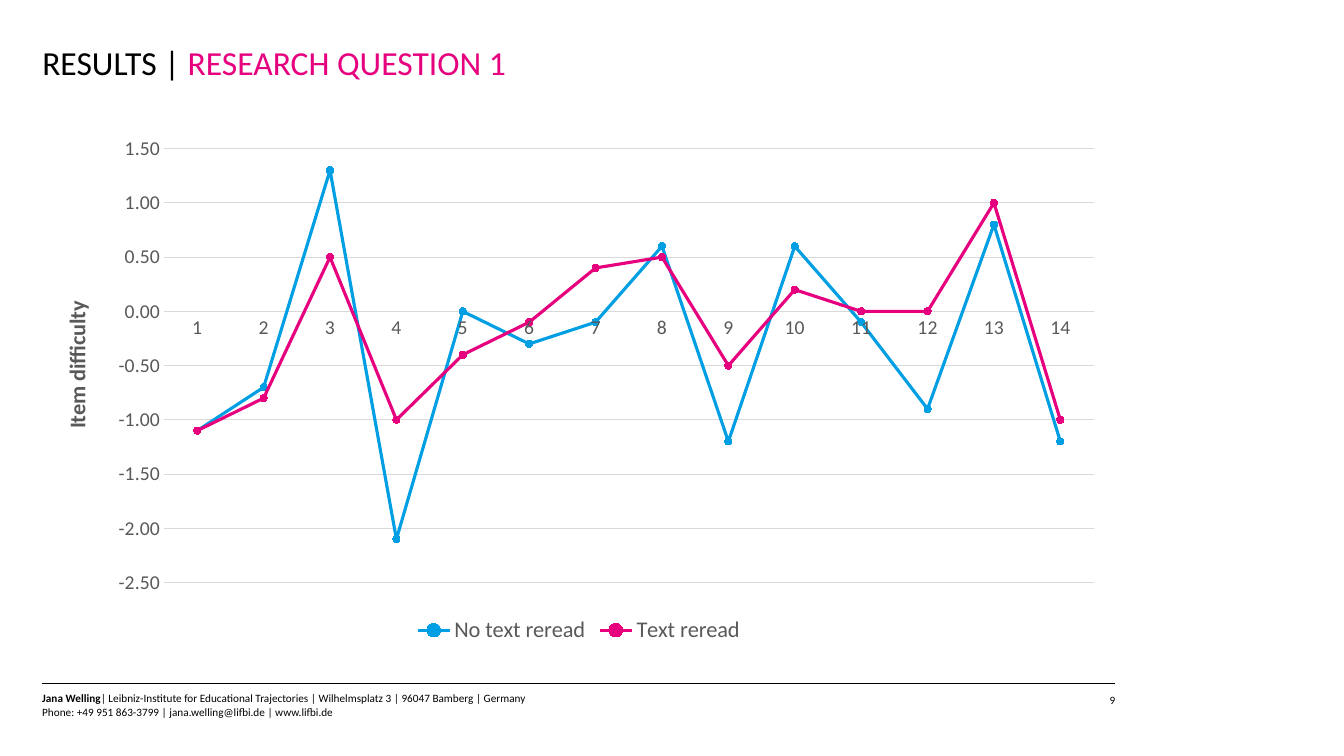
from dataclasses import dataclass

from lxml import etree
from pptx import Presentation
from pptx.chart.data import CategoryChartData
from pptx.dml.color import RGBColor
from pptx.enum.chart import XL_CHART_TYPE, XL_LEGEND_POSITION, XL_MARKER_STYLE, XL_TICK_MARK
from pptx.enum.shapes import MSO_CONNECTOR
from pptx.enum.text import MSO_ANCHOR, PP_ALIGN
from pptx.oxml.ns import qn
from pptx.util import Pt

LINE_MARKERS = XL_CHART_TYPE.LINE_MARKERS
LEGEND_BOTTOM = XL_LEGEND_POSITION.BOTTOM
CIRCLE = XL_MARKER_STYLE.CIRCLE
NO_TICK = XL_TICK_MARK.NONE
STRAIGHT = MSO_CONNECTOR.STRAIGHT
TOP = MSO_ANCHOR.TOP
LEFT, RIGHT = PP_ALIGN.LEFT, PP_ALIGN.RIGHT


@dataclass(frozen=True)
class Theme:
    """Colours, font and type sizes of the slide."""
    font: str = "Calibri"
    black: str = "000000"
    grey: str = "595959"
    grid: str = "D9D9D9"
    blue: str = "009FE3"
    pink: str = "E6007E"
    title_size: int = 24
    label_size: int = 16
    tick_size: int = 14
    chart_size: int = 10
    footer_size: int = 8


THEME = Theme()

ITEM_DIFFICULTY = {
    "No text reread": (THEME.blue, (-1.1, -0.7, 1.3, -2.1, 0, -0.3, -0.1,
                                    0.6, -1.2, 0.6, -0.1, -0.9, 0.8, -1.2)),
    "Text reread": (THEME.pink, (-1.1, -0.8, 0.5, -1, -0.4, -0.1, 0.4,
                                 0.5, -0.5, 0.2, 0, 0, 1, -1)),
}


def format_font(font, size, color, bold=False):
    """Set the family, size, colour and weight of a font."""
    font.name = THEME.font
    font.size = Pt(size)
    font.bold = bold
    font.color.rgb = RGBColor.from_string(color)


def add_text(paragraph, text, size=THEME.footer_size, color=THEME.black, bold=False, align=LEFT):
    """Append one formatted run to a paragraph."""
    paragraph.alignment = align
    run = paragraph.add_run()
    run.text = text
    format_font(run.font, size, color, bold)


def format_line(line, color, width):
    """Give a line a solid colour and a width in points."""
    line.color.rgb = RGBColor.from_string(color)
    line.width = Pt(width)


def prepare_frame(frame):
    """Remove margins, wrap the text and anchor it at the top."""
    frame.margin_left = frame.margin_right = frame.margin_top = frame.margin_bottom = 0
    frame.word_wrap = True
    frame.vertical_anchor = TOP
    return frame


def add_box(slide, left, top, width, height):
    """Add a text box without margins and return its text frame."""
    box = slide.shapes.add_textbox(Pt(left), Pt(top), Pt(width), Pt(height))
    return prepare_frame(box.text_frame)


def set_layout(element, chart_size, **lengths):
    """Place a chart part by lengths in points inside a chart of the given size."""
    for old_layout in element.findall(qn("c:layout")):
        element.remove(old_layout)
    layout = etree.Element(qn("c:layout"))
    manual = etree.SubElement(layout, qn("c:manualLayout"))
    if "w" in lengths:
        etree.SubElement(manual, qn("c:layoutTarget")).set("val", "inner")
    for name in ("x", "y"):
        etree.SubElement(manual, qn(f"c:{name}Mode")).set("val", "edge")
    chart_width, chart_height = chart_size
    for name, length in lengths.items():
        whole = chart_width if name in ("x", "w") else chart_height
        etree.SubElement(manual, qn(f"c:{name}")).set("val", str(length / whole))
    element.insert(0 if element.find(qn("c:tx")) is None else 1, layout)


def fill_title(slide, left, top, width, height):
    """Move and fill the title placeholder."""
    title = slide.shapes.title
    title.left, title.top, title.width, title.height = Pt(left), Pt(top), Pt(width), Pt(height)
    paragraph = prepare_frame(title.text_frame).paragraphs[0]
    add_text(paragraph, "RESULTS | ", size=THEME.title_size)
    add_text(paragraph, "RESEARCH QUESTION 1", size=THEME.title_size, color=THEME.pink)


def format_axes(chart, chart_size):
    """Format both axes, the gridlines and the value axis title."""
    for axis in (chart.category_axis, chart.value_axis):
        axis.major_tick_mark = axis.minor_tick_mark = NO_TICK
        format_font(axis.tick_labels.font, THEME.tick_size, THEME.grey)
    format_line(chart.category_axis.format.line, THEME.grid, 0.75)
    value_axis = chart.value_axis
    value_axis.minimum_scale, value_axis.maximum_scale, value_axis.major_unit = -2.5, 1.5, 0.5
    value_axis.tick_labels.number_format = "0.00"
    value_axis.tick_labels.number_format_is_linked = False
    value_axis.format.line.fill.background()
    format_line(value_axis.major_gridlines.format.line, THEME.grid, 0.75)
    axis_title = value_axis.axis_title
    add_text(axis_title.text_frame.paragraphs[0], "Item difficulty",
             size=THEME.label_size, color=THEME.grey, bold=True)
    body = axis_title.element.find(".//" + qn("a:bodyPr"))
    body.set("rot", "-5400000")
    body.set("vert", "horz")
    set_layout(axis_title.element, chart_size, x=11, y=122)


def add_difficulty_chart(slide, left, top, width, height):
    """Add the line chart of item difficulties in the given box."""
    data = CategoryChartData(number_format="0.00")
    data.categories = [str(item) for item in range(1, 15)]
    for name, (_, values) in ITEM_DIFFICULTY.items():
        data.add_series(name, values)
    chart = slide.shapes.add_chart(
        LINE_MARKERS, Pt(left), Pt(top), Pt(width), Pt(height), data).chart
    chart.has_title = False
    format_font(chart.font, THEME.chart_size, THEME.black)
    format_axes(chart, (width, height))
    chart.has_legend = True
    chart.legend.position = LEGEND_BOTTOM
    chart.legend.include_in_layout = False
    format_font(chart.legend.font, THEME.label_size, THEME.grey)
    plot = chart.plots[0]
    plot.vary_by_categories = False
    for series, (color, _) in zip(plot.series, ITEM_DIFFICULTY.values()):
        series.smooth = False
        format_line(series.format.line, color, 2.25)
        series.marker.style = CIRCLE
        series.marker.size = 5
        series.marker.format.fill.solid()
        series.marker.format.fill.fore_color.rgb = RGBColor.from_string(color)
        format_line(series.marker.format.line, color, 0.75)
    plot_area = chart.element.find(".//" + qn("c:plotArea"))
    set_layout(plot_area, (width, height), x=87, y=16, w=664, h=310)


def add_footer(slide, left, top, width, height):
    """Add the rule, the contact lines and the page number."""
    rule = slide.shapes.add_connector(STRAIGHT, Pt(left), Pt(top), Pt(left + width), Pt(top))
    format_line(rule.line, THEME.black, 0.5)
    etree.SubElement(rule.element.spPr, qn("a:effectLst"))
    contact = add_box(slide, left, top + 6, 585, height - 6)
    address = contact.paragraphs[0]
    add_text(address, "Jana Welling", bold=True)
    add_text(address, "| Leibniz-Institute for Educational Trajectories | "
                      "Wilhelmsplatz 3 | 96047 Bamberg | Germany")
    add_text(contact.add_paragraph(),
             "Phone: +49 951 863-3799 | jana.welling@lifbi.de | www.lifbi.de")
    number = add_box(slide, left + width - 45, top + 7, 45, 10)
    add_text(number.paragraphs[0], "9", align=RIGHT)


def main():
    """Build the results slide and save it."""
    presentation = Presentation()
    presentation.slide_width, presentation.slide_height = Pt(960), Pt(540)
    slide = presentation.slides.add_slide(presentation.slide_layouts[5])
    left, width = 30.2, 766.5
    fill_title(slide, left, 30, width, 60)
    add_difficulty_chart(slide, left, 90.2, width, 373)
    add_footer(slide, left, 488, width, 26)
    presentation.save("out.pptx")


if __name__ == "__main__":
    main()
